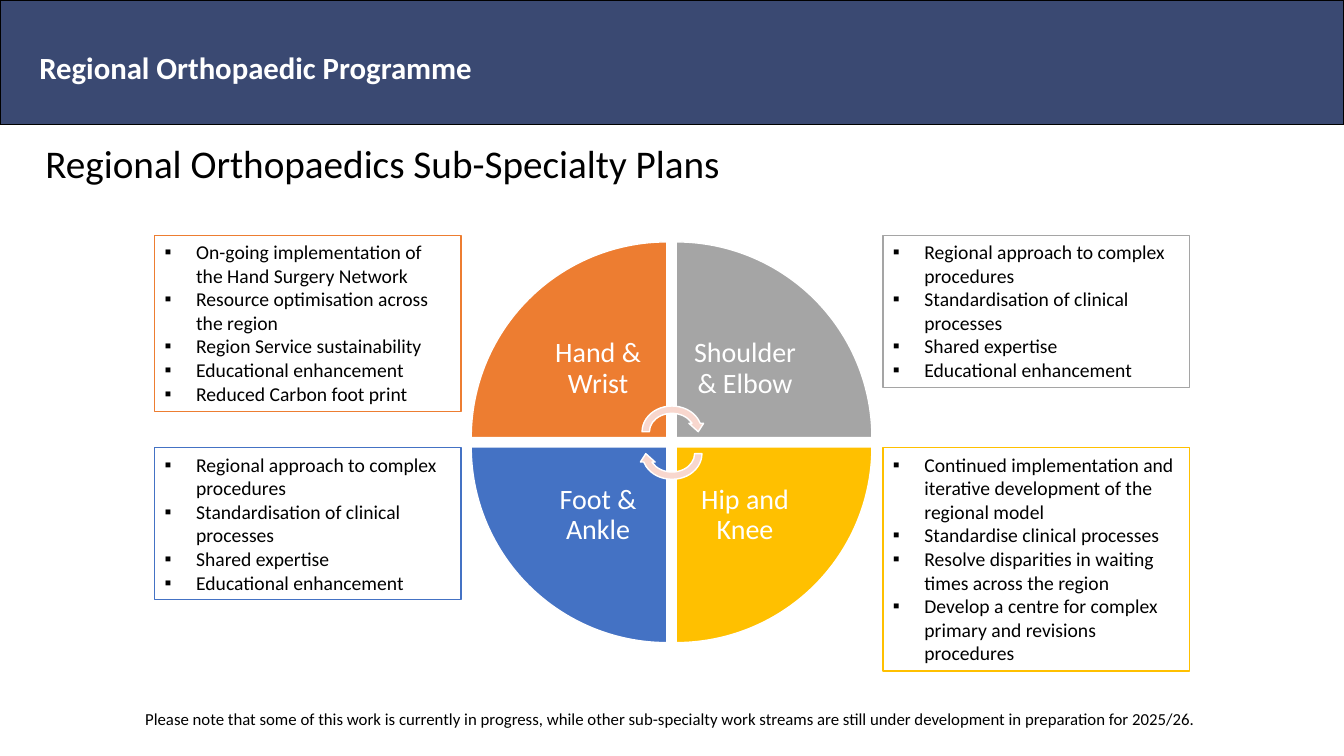
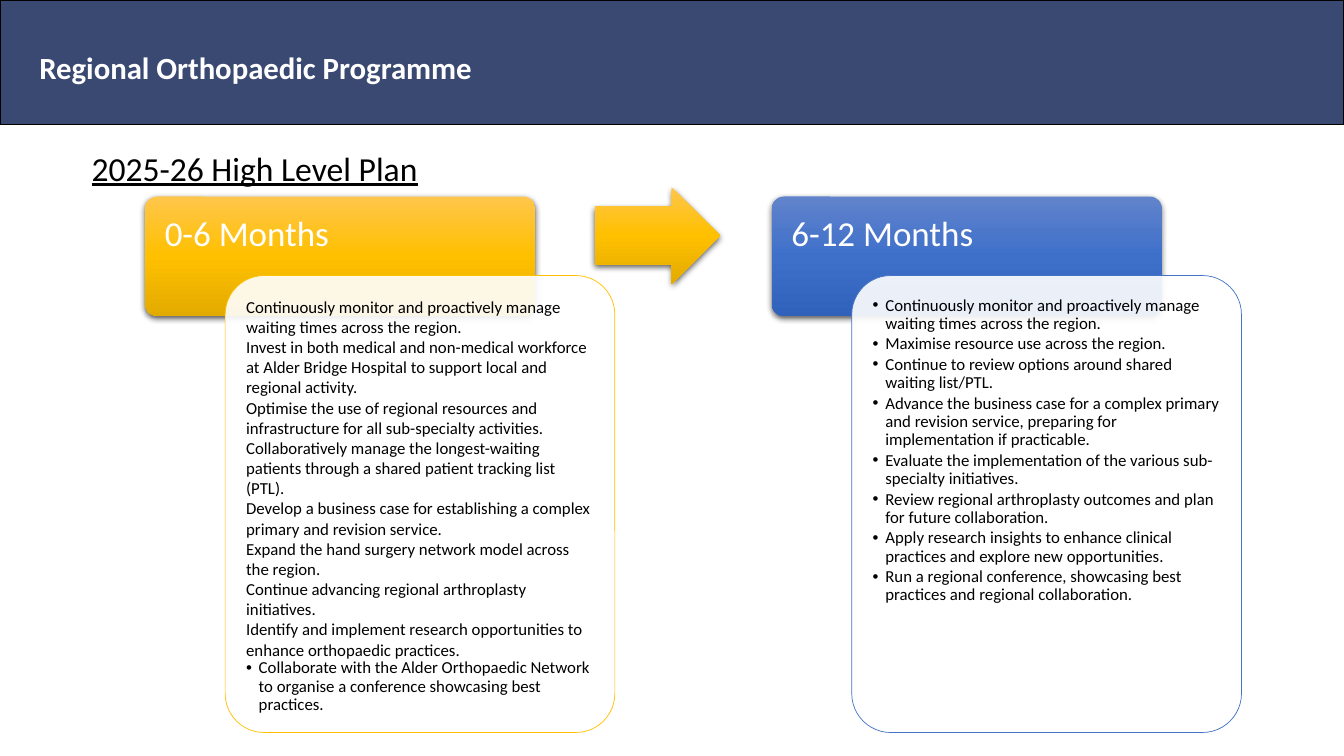
import copy
import dataclasses
import typing

import lxml.etree
import pptx
import pptx.dml.color
import pptx.enum.dml
import pptx.enum.shapes
import pptx.enum.text
import pptx.oxml.ns
import pptx.util

# Shared style: lengths are cells of a grid of 160 columns by 90 rows
COLUMNS, ROWS = 160, 90
CELL = pptx.util.Inches(7.5) / ROWS
FONT = "Calibri"
NAVY, BLACK, WHITE = "3A4972", "000000", "FFFFFF"
ORANGE, GREY, BLUE, GOLD, PINK = "ED7D31", "A5A5A5", "4472C4", "FFC000", "F8D7CE"
GOLD_STOPS = ("FFC64B", "FFC000", "E3AB00")
BLUE_STOPS = ("6183CB", "3E70CA", "3062BB")
PROGRAMME = "Regional Orthopaedic Programme"
LAYOUT_TWO_LISTS, LAYOUT_FOUR_LISTS = 3, 4

PRESET = pptx.enum.shapes.MSO_SHAPE
ALIGN = pptx.enum.text.PP_ALIGN
ANCHOR = pptx.enum.text.MSO_ANCHOR
qn = pptx.oxml.ns.qn


class Box(typing.NamedTuple):
    left: float
    top: float
    width: float
    height: float


@dataclasses.dataclass(frozen=True)
class TextStyle:
    size: float
    color: str = BLACK
    bold: bool = False
    underline: bool = False
    align: ALIGN = ALIGN.LEFT
    spacing: float = 1.0
    after: float = 0
    bullet: str = ""
    indent: float = 0


@dataclasses.dataclass(frozen=True)
class Specialty:
    name: str
    color: str
    column: int
    row: int
    turn: int
    list_rows: float
    items: tuple[str, ...]


@dataclasses.dataclass(frozen=True)
class Period:
    name: str
    stops: tuple[str, ...]
    border: str
    plain_items: tuple[str, ...]
    bulleted_items: tuple[str, ...]


HEADING = TextStyle(22, WHITE, bold=True)
TITLE = TextStyle(28)
PLAN_TITLE = TextStyle(24, underline=True)
NOTE = TextStyle(12)
WEDGE_LABEL = TextStyle(20, WHITE, align=ALIGN.CENTER, spacing=0.9)
SPECIALTY_ITEM = TextStyle(14, bullet="▪", indent=3.75)
PERIOD_NAME = TextStyle(25, WHITE, spacing=0.9)
PLAIN_ITEM = TextStyle(12)
BULLETED_ITEM = TextStyle(12, spacing=0.9, after=1.8, bullet="•", indent=1.5)

COMMON_ITEMS = (
    "Regional approach to complex procedures",
    "Standardisation of clinical processes",
    "Shared expertise",
    "Educational enhancement",
)
SPECIALTIES = (
    Specialty("Hand & Wrist", ORANGE, 0, 0, 0, 21, (
        "On-going implementation of the Hand Surgery Network",
        "Resource optimisation across the region",
        "Region Service sustainability",
        "Educational enhancement",
        "Reduced Carbon foot print",
    )),
    Specialty("Shoulder & Elbow", GREY, 1, 0, 90, 18.1, COMMON_ITEMS),
    Specialty("Hip and Knee", GOLD, 1, 1, 180, 26.6, (
        "Continued implementation and iterative development of the regional model",
        "Standardise clinical processes",
        "Resolve disparities in waiting times across the region",
        "Develop a centre for complex primary and revisions procedures",
    )),
    Specialty("Foot & Ankle", BLUE, 0, 1, 270, 18.1, COMMON_ITEMS),
)
PERIODS = (
    Period("0-6 Months", GOLD_STOPS, GOLD, (
        "Continuously monitor and proactively manage waiting times across the region.",
        "Invest in both medical and non-medical workforce at Alder Bridge Hospital "
        "to support local and regional activity.",
        "Optimise the use of regional resources and infrastructure for all "
        "sub-specialty activities.",
        "Collaboratively manage the longest-waiting patients through a shared "
        "patient tracking list (PTL).",
        "Develop a business case for establishing a complex primary and revision service.",
        "Expand the hand surgery network model across the region.",
        "Continue advancing regional arthroplasty initiatives.",
        "Identify and implement research opportunities to enhance orthopaedic practices.",
    ), (
        "Collaborate with the Alder Orthopaedic Network to organise a conference "
        "showcasing best practices.",
    )),
    Period("6-12 Months", BLUE_STOPS, BLUE, (), (
        "Continuously monitor and proactively manage waiting times across the region.",
        "Maximise resource use across the region.",
        "Continue to review options around shared waiting list/PTL.",
        "Advance the business case for a complex primary and revision service, "
        "preparing for implementation if practicable.",
        "Evaluate the implementation of the various sub-specialty initiatives.",
        "Review regional arthroplasty outcomes and plan for future collaboration.",
        "Apply research insights to enhance clinical practices and explore new opportunities.",
        "Run a regional conference, showcasing best practices and regional collaboration.",
    )),
)


# Drawing helpers
def cells(count: float) -> int:
    return round(count * CELL)


def rgb(color: str) -> pptx.dml.color.RGBColor:
    return pptx.dml.color.RGBColor.from_string(color)


def place(shape, box: Box) -> None:
    shape.left, shape.top, shape.width, shape.height = map(cells, box)


def paint(shape, fill: str, line: str = "", line_width: float = 1) -> None:
    shape.fill.solid()
    shape.fill.fore_color.rgb = rgb(fill)
    if line:
        shape.line.color.rgb = rgb(line)
        shape.line.width = pptx.util.Pt(line_width)
    else:
        shape.line.fill.background()


def add_preset(slide, preset: PRESET, box: Box, fill: str, line: str = "",
               line_width: float = 1, adjustments: tuple[float, ...] = ()):
    shape = slide.shapes.add_shape(preset, *map(cells, box))
    shape.shadow.inherit = False
    paint(shape, fill, line, line_width)
    for index, value in enumerate(adjustments):
        shape.adjustments[index] = value
    return shape


def add_gloss(shape, colors: tuple[str, ...]) -> None:
    """Vertical gradient with a soft shadow underneath."""
    shape.fill.gradient()
    shape.fill.gradient_angle = 270
    stop_list = next(shape.element.iter(qn("a:gsLst")))
    stop_list.insert(1, copy.deepcopy(stop_list[0]))
    for index, (stop, color) in enumerate(zip(shape.fill.gradient_stops, colors)):
        stop.position = index / 2
        stop.color.rgb = rgb(color)
    effects = next(shape.element.iter(qn("a:effectLst")))
    shadow = lxml.etree.SubElement(
        effects, qn("a:outerShdw"), blurRad=str(pptx.util.Pt(4.5)),
        dist=str(pptx.util.Pt(1.5)), dir="5400000", algn="ctr", rotWithShape="0")
    color_node = lxml.etree.SubElement(shadow, qn("a:srgbClr"), val=BLACK)
    lxml.etree.SubElement(color_node, qn("a:alpha"), val="63000")


def set_opacity(shape, percent: int) -> None:
    color_node = next(shape.element.iter(qn("a:srgbClr")))
    lxml.etree.SubElement(color_node, qn("a:alpha"), val=str(percent * 1000))


def format_paragraph(paragraph, style: TextStyle) -> None:
    paragraph.alignment = style.align
    paragraph.line_spacing = style.spacing
    paragraph.space_before = pptx.util.Pt(0)
    paragraph.space_after = pptx.util.Pt(style.after)
    properties = paragraph._p.get_or_add_pPr()
    properties.set("marL", str(cells(style.indent)))
    properties.set("indent", str(-cells(style.indent)))
    if style.bullet:
        lxml.etree.SubElement(properties, qn("a:buFont"), typeface="Arial")
        lxml.etree.SubElement(properties, qn("a:buChar"), char=style.bullet)
    else:
        lxml.etree.SubElement(properties, qn("a:buNone"))
    for run in paragraph.runs:
        run.font.name = FONT
        run.font.size = pptx.util.Pt(style.size)
        run.font.bold = style.bold
        run.font.underline = style.underline
        run.font.color.rgb = rgb(style.color)


def write(shape, lines: list[tuple[str, TextStyle]],
          insets: tuple[float, float, float, float] = (1.2, 0.6, 1.2, 0.6),
          anchor: ANCHOR = ANCHOR.TOP) -> None:
    frame = shape.text_frame
    frame.word_wrap = True
    frame.auto_size = pptx.enum.text.MSO_AUTO_SIZE.NONE
    frame.vertical_anchor = anchor
    (frame.margin_left, frame.margin_top,
     frame.margin_right, frame.margin_bottom) = map(cells, insets)
    frame.text = "\n".join(text for text, _ in lines)
    for paragraph, (_, style) in zip(frame.paragraphs, lines):
        format_paragraph(paragraph, style)


def add_label(slide, box: Box, text: str, style: TextStyle, **options) -> None:
    write(slide.shapes.add_textbox(*map(cells, box)), [(text, style)], **options)


# Shared frame of the slides
def add_master_band(presentation, slide) -> None:
    band = add_preset(slide, PRESET.RECTANGLE, Box(0, 0, COLUMNS, 14.8), NAVY, BLACK)
    presentation.slide_master.shapes.element.insert(2, band.element)


def add_slide(presentation, layout: int, title: str, box: Box, style: TextStyle):
    slide = presentation.slides.add_slide(presentation.slide_layouts[layout])
    add_label(slide, Box(3.5, 5.2, 56.3, 5.6), PROGRAMME, HEADING)
    place(slide.shapes.title, box)
    write(slide.shapes.title, [(title, style)])
    return slide


# Slide 1: four specialties around a wheel
def add_specialty(slide, specialty: Specialty, placeholder) -> None:
    size, pitch, label_size = 23.3, 24.4, 16.4
    left, top = 56.1 + pitch * specialty.column, 28.8 + pitch * specialty.row
    wedge = add_preset(slide, PRESET.PIE_WEDGE, Box(left, top, size, size),
                       specialty.color, WHITE)
    wedge.rotation = specialty.turn
    inward = size - label_size
    label_box = Box(left + inward * (1 - specialty.column),
                    top + inward * (1 - specialty.row), label_size, label_size)
    add_label(slide, label_box, specialty.name, WEDGE_LABEL,
              insets=(1.9,) * 4, anchor=ANCHOR.MIDDLE)
    place(placeholder, Box(18.4 + 86.7 * specialty.column, 28 + 25.3 * specialty.row,
                           36.5, specialty.list_rows))
    paint(placeholder, WHITE, specialty.color)
    write(placeholder, [(item, SPECIALTY_ITEM) for item in specialty.items])


def build_specialties(presentation):
    slide = add_slide(presentation, LAYOUT_FOUR_LISTS,
                      "Regional Orthopaedics Sub-Specialty Plans",
                      Box(4.2, 16, 89.6, 6.8), TITLE)
    for index, specialty in enumerate(SPECIALTIES, start=1):
        add_specialty(slide, specialty, slide.placeholders[index])
    for top, turn in ((47.9, 0), (50.5, 180)):
        arrow = add_preset(slide, PRESET.CIRCULAR_ARROW, Box(76, top, 8, 7), PINK, WHITE)
        arrow.rotation = turn
    add_label(slide, Box(16.1, 83.8, 127.9, 3.6),
              "Please note that some of this work is currently in progress, while other "
              "sub-specialty work streams are still under development in preparation "
              "for 2025/26.", NOTE)
    return slide


# Slide 2: two periods joined by an arrow
def add_period(slide, period: Period, left: float, placeholder) -> None:
    header = add_preset(slide, PRESET.ROUNDED_RECTANGLE, Box(left, 23.4, 46.4, 14.2),
                        period.border, adjustments=(0.1,))
    add_gloss(header, period.stops)
    write(header, [(period.name, PERIOD_NAME)], insets=(1.9, 1.9, 1.9, 1.2))
    card = Box(left + 9.5, 32.8, 46.4, 54.4)
    panel = add_preset(slide, PRESET.ROUNDED_RECTANGLE, card, WHITE, period.border,
                       line_width=0.5, adjustments=(0.1,))
    set_opacity(panel, 90)
    margin = 1.4
    place(placeholder, Box(card.left + margin, card.top + margin,
                           card.width - 2 * margin, card.height - 2 * margin))
    write(placeholder,
          [(item, PLAIN_ITEM) for item in period.plain_items]
          + [(item, BULLETED_ITEM) for item in period.bulleted_items],
          insets=(1.1,) * 4)
    slide.shapes.element.append(placeholder.element)


def build_plan(presentation) -> None:
    slide = add_slide(presentation, LAYOUT_TWO_LISTS, "2025-26 High Level Plan",
                      Box(9.7, 17, 45.6, 6), PLAN_TITLE)
    for index, period in enumerate(PERIODS):
        add_period(slide, period, 17.3 + 74.6 * index, slide.placeholders[index + 1])
    arrow = add_preset(slide, PRESET.RIGHT_ARROW, Box(70.8, 22.3, 14.9, 11.5), GOLD,
                       adjustments=(0.6, 0.5))
    add_gloss(arrow, GOLD_STOPS)


def main() -> None:
    presentation = pptx.Presentation()
    presentation.slide_width, presentation.slide_height = cells(COLUMNS), cells(ROWS)
    first_slide = build_specialties(presentation)
    add_master_band(presentation, first_slide)
    build_plan(presentation)
    presentation.save("out.pptx")


if __name__ == "__main__":
    main()
